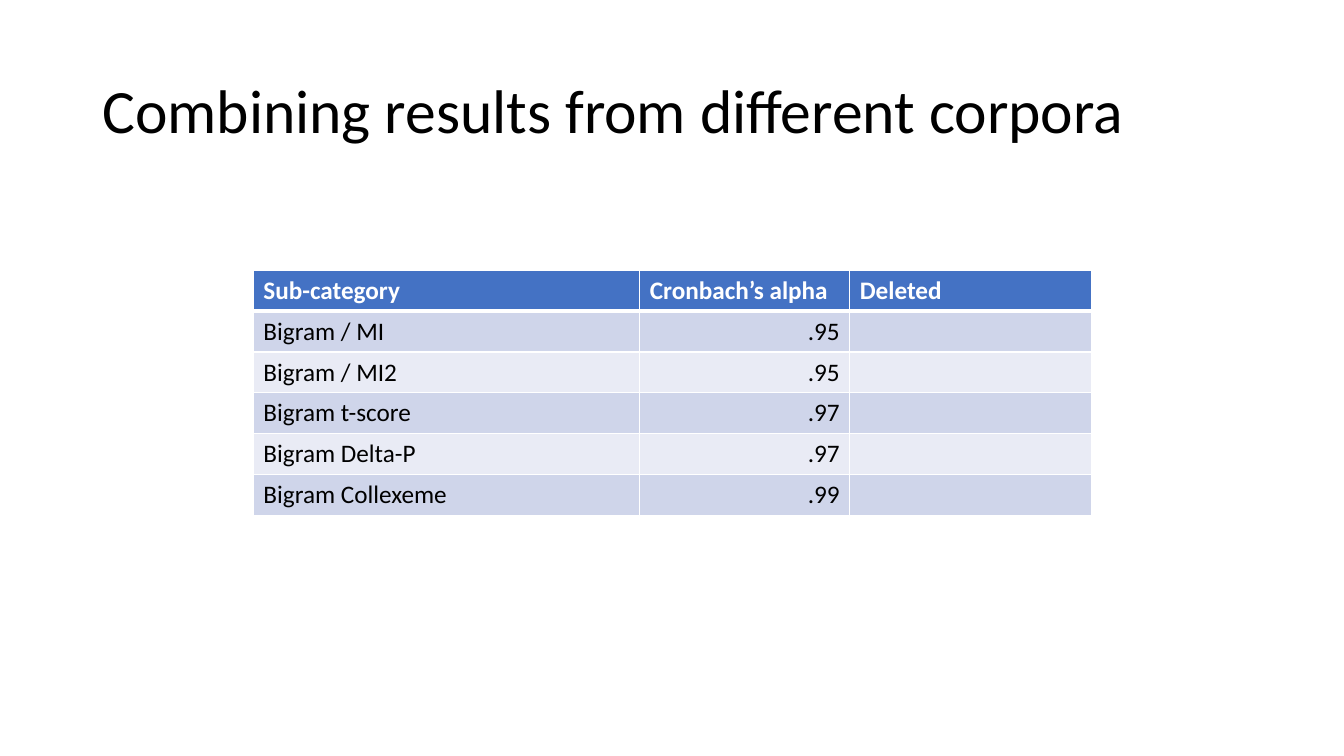
from lxml import etree
from pptx import Presentation, util as u
from pptx.dml.color import RGBColor
from pptx.enum import text
from pptx.oxml.ns import qn

HUES = {"ink": "000000", "paper": "FFFFFF", "head": "4472C4",
        "odd": "CFD5EA", "even": "E9EBF5"}
ROWS = [
    ("Sub-category", "Cronbach’s alpha", "Deleted"),
    ("Bigram / MI", ".95", ""),
    ("Bigram / MI2", ".95", ""),
    ("Bigram t-score", ".97", ""),
    ("Bigram Delta-P", ".97", ""),
    ("Bigram Collexeme", ".99", ""),
]


class Deck:
    font = "Calibri"

    def __init__(self):
        self.prs = Presentation()
        self.prs.slide_width, self.prs.slide_height = u.Pt(960), u.Pt(540)
        self.slide = self.prs.slides.add_slide(self.prs.slide_layouts[6])

    def hue(self, name):
        return RGBColor.from_string(HUES[name])

    def label(self, para, words, size, hue, bold=False):
        run = para.add_run()
        run.text = words
        run.font.name, run.font.size, run.font.bold = self.font, u.Pt(size), bold
        run.font.color.rgb = self.hue(hue)

    def title(self, words, box):
        frame = self.slide.shapes.add_textbox(*map(u.Pt, box)).text_frame
        frame.word_wrap = True
        frame.vertical_anchor = text.MSO_ANCHOR.MIDDLE
        para = frame.paragraphs[0]
        para.line_spacing = 0.9
        self.label(para, words, 44, "ink")

    def edge(self, cell, side, width):
        props = cell._tc.get_or_add_tcPr()
        line = etree.SubElement(props, qn(f"a:ln{side}"), w=str(u.Pt(width)))
        fill = etree.SubElement(line, qn("a:solidFill"))
        etree.SubElement(fill, qn("a:srgbClr"), val=HUES["paper"])

    def cell(self, cell, words, row, col):
        head = row == 0
        for side in "LRTB":
            thick = (row, side) in ((0, "B"), (1, "T"))
            self.edge(cell, side, 3 if thick else 1)
        cell.fill.solid()
        cell.fill.fore_color.rgb = self.hue(
            "head" if head else "odd" if row % 2 else "even")
        para = cell.text_frame.paragraphs[0]
        if col == 1 and not head:
            para.alignment = text.PP_ALIGN.RIGHT
        if words:
            self.label(para, words, 18, "paper" if head else "ink", head)

    def table(self, rows, left, top, widths, high):
        grid = self.slide.shapes.add_table(
            len(rows), len(widths), u.Pt(left), u.Pt(top),
            u.Pt(sum(widths)), u.Pt(high * len(rows))).table
        for col, width in zip(grid.columns, widths):
            col.width = u.Pt(width)
        for r, row in enumerate(rows):
            for c, words in enumerate(row):
                self.cell(grid.cell(r, c), words, r, c)


def main():
    deck = Deck()
    deck.title("Combining results from different corpora", (66, 28.8, 828, 104.4))
    deck.table(ROWS, 181, 193, (276, 150, 172.5), 29.2)
    deck.prs.save("out.pptx")


if __name__ == "__main__":
    main()
